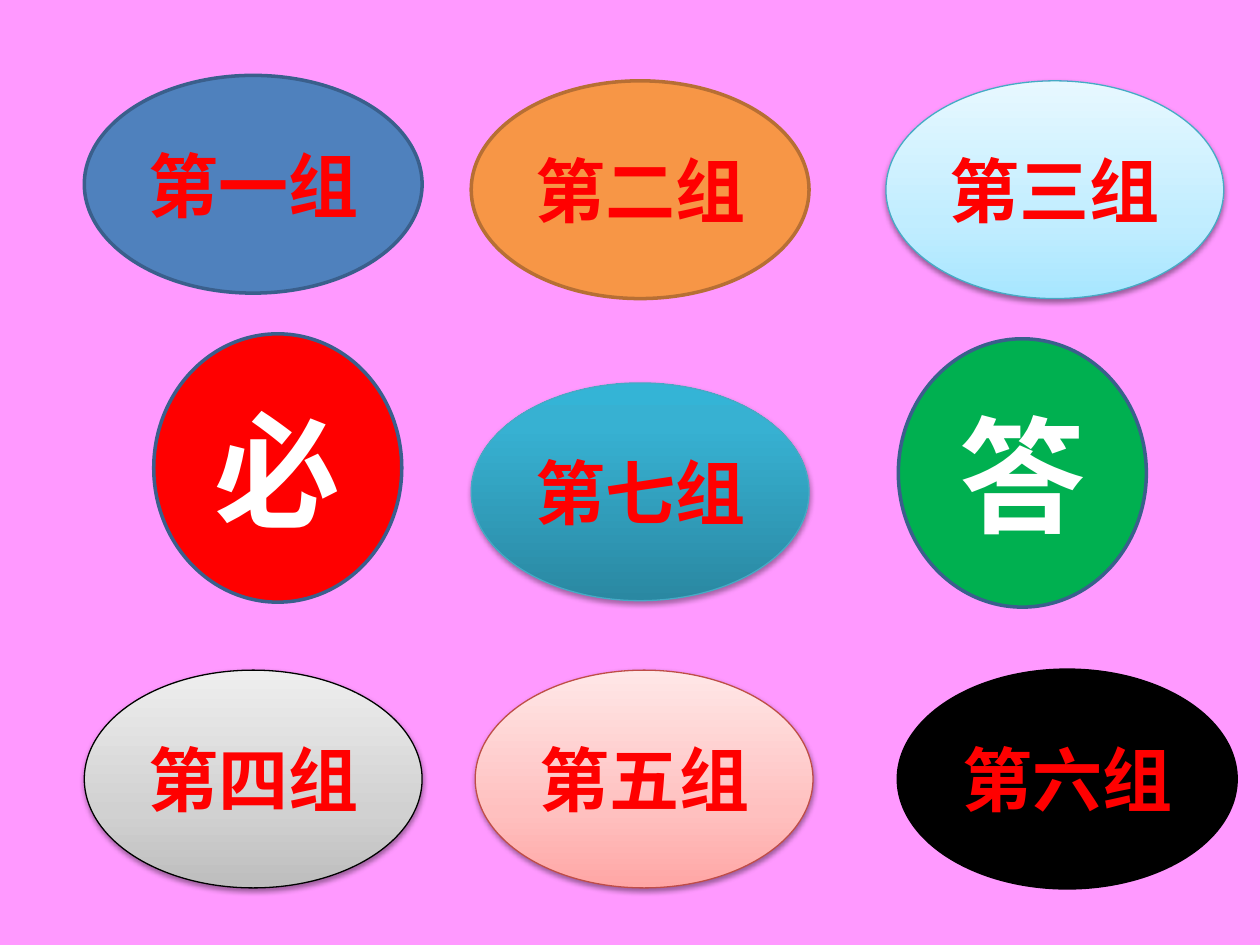
import pptx
import pptx.dml.color
import pptx.enum.shapes
import pptx.enum.text
import pptx.oxml
import pptx.oxml.ns
import pptx.util
from lxml import etree

Cm, Pt = pptx.util.Cm, pptx.util.Pt
RGBColor = pptx.dml.color.RGBColor
qn = pptx.oxml.ns.qn

PINK = RGBColor(0xFF, 0x99, 0xFF)
RED = RGBColor(0xFF, 0x00, 0x00)
WHITE = RGBColor(0xFF, 0xFF, 0xFF)
BLACK = RGBColor(0x00, 0x00, 0x00)
BLUE = RGBColor(0x4F, 0x81, 0xBD)
DARK_BLUE = RGBColor(0x3A, 0x5F, 0x8C)
ORANGE = RGBColor(0xF7, 0x96, 0x46)
BROWN = RGBColor(0xB7, 0x6F, 0x34)
GREEN = RGBColor(0x00, 0xB0, 0x50)
TEAL = RGBColor(0x46, 0xAA, 0xC5)
BRICK = RGBColor(0xBF, 0x4C, 0x48)

# Gradient stops (percent, colour), running from bottom to top
SKY_STOPS = [(0, RGBColor(0xA7, 0xE6, 0xFF)), (35, RGBColor(0xC1, 0xED, 0xFF)),
             (100, RGBColor(0xE7, 0xF8, 0xFF))]
TEAL_STOPS = [(0, RGBColor(0x2A, 0x88, 0xA2)), (80, RGBColor(0x37, 0xB1, 0xD2)),
              (100, RGBColor(0x34, 0xB4, 0xD6))]
GREY_STOPS = [(0, RGBColor(0xBD, 0xBD, 0xBD)), (35, RGBColor(0xD1, 0xD1, 0xD1)),
              (100, RGBColor(0xEE, 0xEE, 0xEE))]
ROSE_STOPS = [(0, RGBColor(0xFF, 0xA6, 0xA5)), (35, RGBColor(0xFF, 0xC0, 0xBF)),
              (100, RGBColor(0xFF, 0xE7, 0xE7))]

GROUP_SIZE = (6.81, 4.39)
WORD_SIZE = (5.0, 5.41)


def add_colour(parent, colour):
    return etree.SubElement(parent, qn("a:srgbClr"), val=str(colour))


def fill_gradient(shape, stops):
    shape.fill.gradient()
    shape.fill.gradient_angle = 90
    stop_list = shape._element.spPr.find(qn("a:gradFill")).find(qn("a:gsLst"))
    for stop in list(stop_list):
        stop_list.remove(stop)
    for percent, colour in stops:
        add_colour(etree.SubElement(stop_list, qn("a:gs"), pos=str(percent * 1000)), colour)


def add_shadow(shape, distance, opacity):
    effects = shape._element.spPr.find(qn("a:effectLst"))
    shadow = etree.SubElement(effects, qn("a:outerShdw"), blurRad=str(Pt(3.1)),
                              dist=str(Pt(distance)), dir="5400000", rotWithShape="0")
    etree.SubElement(add_colour(shadow, BLACK), qn("a:alpha"), val=str(opacity * 1000))


def write_text(shape, text, size, colour, outline=None):
    frame = shape.text_frame
    frame.word_wrap = True
    frame.vertical_anchor = pptx.enum.text.MSO_ANCHOR.MIDDLE
    para = frame.paragraphs[0]
    para.alignment = pptx.enum.text.PP_ALIGN.CENTER
    span = para.add_run()
    span.text = text
    span.font.name = "Calibri"
    span.font.size = Pt(size)
    span.font.bold = True
    span.font.color.rgb = colour
    if outline is not None:
        line = etree.Element(qn("a:ln"), w=str(Pt(1.45)))
        add_colour(etree.SubElement(line, qn("a:solidFill")), outline)
        span.font._element.insert(0, line)


def add_oval(page, left, top, size, line, fill=None, stops=None, shadow=None):
    shape = page.shapes.add_shape(pptx.enum.shapes.MSO_SHAPE.OVAL, Cm(left), Cm(top),
                                  Cm(size[0]), Cm(size[1]))
    shape.shadow.inherit = False
    if stops:
        fill_gradient(shape, stops)
    else:
        shape.fill.solid()
        shape.fill.fore_color.rgb = fill
    shape.line.color.rgb = line
    shape.line.width = Pt(0.75 if stops else 2)
    if shadow:
        add_shadow(shape, *shadow)
    return shape


def add_group(page, text, left, top, **style):
    shape = add_oval(page, left, top, GROUP_SIZE, **style)
    write_text(shape, text, size=40, colour=RED, outline=WHITE)


def add_word(page, text, left, top, fill):
    shape = add_oval(page, left, top, WORD_SIZE, line=DARK_BLUE, fill=fill)
    write_text(shape, text, size=72, colour=WHITE)


def main():
    deck = pptx.Presentation()
    deck.slide_width, deck.slide_height = Cm(25.4), Cm(19.05)
    page = deck.slides.add_slide(deck.slide_layouts[6])
    page.background.fill.solid()
    page.background.fill.fore_color.rgb = PINK

    # Group ovals
    soft = (1.6, 38)
    add_group(page, "第一组", 1.7, 1.52, line=DARK_BLUE, fill=BLUE)
    add_group(page, "第二组", 9.5, 1.63, line=BROWN, fill=ORANGE)
    add_group(page, "第三组", 17.86, 1.63, line=TEAL, stops=SKY_STOPS, shadow=soft)
    add_group(page, "第七组", 9.5, 7.72, line=TEAL, stops=TEAL_STOPS, shadow=(1.8, 35))
    add_group(page, "第四组", 1.7, 13.51, line=BLACK, stops=GREY_STOPS, shadow=soft)
    add_group(page, "第五组", 9.58, 13.51, line=BRICK, stops=ROSE_STOPS, shadow=soft)
    add_group(page, "第六组", 18.11, 13.51, line=BLACK, fill=BLACK)

    # Large characters either side of the centre
    add_word(page, "必", 3.1, 6.73, RED)
    add_word(page, "答", 18.11, 6.83, GREEN)

    deck.save("out.pptx")


if __name__ == "__main__":
    main()
